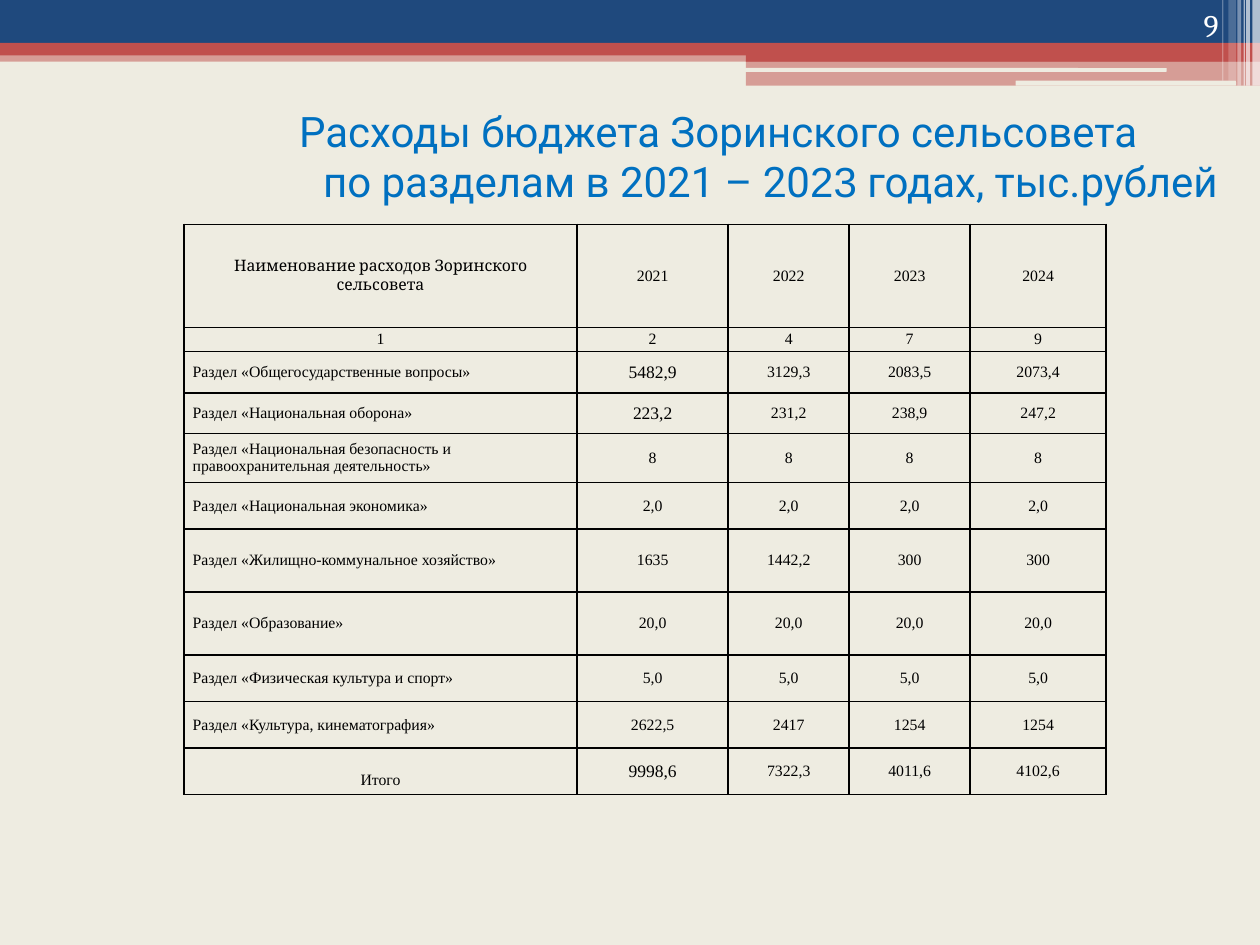
from lxml.etree import SubElement
from pptx import Presentation
from pptx.dml.color import RGBColor
from pptx.enum.shapes import MSO_SHAPE
from pptx.enum.text import MSO_ANCHOR, PP_ALIGN
from pptx.oxml.ns import qn
from pptx.util import Inches, Pt

CREAM, NAVY, RED, WHITE, BLACK = "EEECE1", "1F497D", "C0504D", "FFFFFF", "000000"
TITLE_BLUE = "0070C0"
SERIF = "Times New Roman"

# left, top, width, height, colour, opacity in percent
BANDS = [
    (0, 0.4, 10, 0.09, RED, 50),
    (0, 0, 10, 0.34, NAVY, 100),
    (0, 0.34, 10, 0.1, RED, 100),
    (5.92, 0.39, 4.08, 0.1, RED, 100),
    (5.92, 0.48, 4.08, 0.2, RED, 50),
]
SLOTS = [(5.91, 0.54, 3.35, 0.03), (8.06, 0.64, 1.75, 0.04)]
# left, width, height, opacity in percent
STRIPES = [
    (9.94, 0.06, 0.68, 65),
    (9.89, 0.03, 0.68, 65),
    (9.87, 0.01, 0.68, 60),
    (9.82, 0.03, 0.68, 40),
    (9.75, 0.06, 0.64, 20),
    (9.7, 0.01, 0.64, 30),
]

COLUMN_WIDTHS = [3.12, 1.2, 0.96, 0.96, 1.08]
ROW_HEIGHTS = [0.82, 0.19, 0.33, 0.32, 0.39, 0.37, 0.5, 0.5, 0.37, 0.37, 0.37]
EXPENSES = [
    ("Наименование расходов Зоринского сельсовета", "2021", "2022", "2023", "2024"),
    ("1", "2", "4", "7", "9"),
    ("Раздел «Общегосударственные вопросы»", "5482,9", "3129,3", "2083,5", "2073,4"),
    ("Раздел «Национальная оборона»", "223,2", "231,2", "238,9", "247,2"),
    ("Раздел «Национальная безопасность и правоохранительная деятельность»",
     "8", "8", "8", "8"),
    ("Раздел «Национальная экономика»", "2,0", "2,0", "2,0", "2,0"),
    ("Раздел «Жилищно-коммунальное хозяйство»", "1635", "1442,2", "300", "300"),
    ("Раздел «Образование»", "20,0", "20,0", "20,0", "20,0"),
    ("Раздел «Физическая культура и спорт»", "5,0", "5,0", "5,0", "5,0"),
    ("Раздел «Культура, кинематография»", "2622,5", "2417", "1254", "1254"),
    ("Итого", "9998,6", "7322,3", "4011,6", "4102,6"),
]
LARGER_VALUES = {"5482,9", "223,2", "9998,6"}


def rgb(hex_colour):
    return RGBColor.from_string(hex_colour)


def write(paragraph, text, *, size, font, colour=BLACK, align=PP_ALIGN.CENTER):
    paragraph.alignment = align
    run = paragraph.add_run()
    run.text = text
    run.font.size = Pt(size)
    run.font.name = font
    run.font.color.rgb = rgb(colour)


def add_block(slide, left, top, width, height, colour, opacity=100,
              kind=MSO_SHAPE.RECTANGLE):
    block = slide.shapes.add_shape(
        kind, Inches(left), Inches(top), Inches(width), Inches(height))
    block.shadow.inherit = False
    block.line.fill.background()
    block.fill.solid()
    block.fill.fore_color.rgb = rgb(colour)
    if opacity < 100:
        tint = block.fill._xPr.find(".//" + qn("a:srgbClr"))
        SubElement(tint, qn("a:alpha"), val=str(opacity * 1000))


def add_header(slide):
    for band in BANDS:
        add_block(slide, *band)
    for slot in SLOTS:
        add_block(slide, *slot, CREAM, kind=MSO_SHAPE.ROUNDED_RECTANGLE)
    for left, width, height, opacity in STRIPES:
        add_block(slide, left, 0, width, height, WHITE, opacity)


def fill_title(title):
    title.left, title.top = Inches(0), Inches(0.84)
    title.width, title.height = Inches(10), Inches(0.79)
    frame = title.text_frame
    frame.word_wrap = True
    frame.vertical_anchor = MSO_ANCHOR.MIDDLE
    # Each line is centred in the space right of its own indent
    lines = [
        (1.4, [("Расходы бюджета Зоринского сельсовета", "Roboto")]),
        (2.23, [("по разделам в 2021 – 20", "Roboto"), ("23", "Arial"),
                (" годах, тыс.рублей", "Roboto")]),
    ]
    for number, (indent, parts) in enumerate(lines):
        line = frame.add_paragraph() if number else frame.paragraphs[0]
        line.space_before = Pt(0)
        line._p.get_or_add_pPr().set("marL", str(Inches(indent)))
        for text, font in parts:
            write(line, text, size=24, font=font, colour=TITLE_BLUE)


def add_page_number(slide):
    page_number = slide.shapes.add_textbox(
        Inches(8.94), Inches(0), Inches(0.83), Inches(0.4))
    frame = page_number.text_frame
    frame.word_wrap = True
    frame.vertical_anchor = MSO_ANCHOR.BOTTOM
    write(frame.paragraphs[0], "9", size=18, font="Cambria", colour=WHITE,
          align=PP_ALIGN.RIGHT)


def add_borders(cell):
    properties = cell._tc.get_or_add_tcPr()
    for side in ("lnL", "lnR", "lnT", "lnB"):
        border = SubElement(properties, qn("a:" + side), w=str(Pt(1)))
        solid = SubElement(border, qn("a:solidFill"))
        SubElement(solid, qn("a:srgbClr"), val=BLACK)


def add_expense_table(slide):
    table = slide.shapes.add_table(
        len(ROW_HEIGHTS), len(COLUMN_WIDTHS), Inches(1.46), Inches(1.78),
        Inches(sum(COLUMN_WIDTHS)), Inches(sum(ROW_HEIGHTS))).table
    table.first_row = table.horz_banding = False
    for column, width in zip(table.columns, COLUMN_WIDTHS):
        column.width = Inches(width)
    for row, height in zip(table.rows, ROW_HEIGHTS):
        row.height = Inches(height)

    for r, values in enumerate(EXPENSES):
        for c, text in enumerate(values):
            cell = table.cell(r, c)
            cell.margin_left = cell.margin_right = Inches(0.07)
            cell.margin_top = cell.margin_bottom = Inches(0)
            cell.vertical_anchor = MSO_ANCHOR.MIDDLE
            add_borders(cell)
            cell.fill.background()
            write(cell.text_frame.paragraphs[0], text,
                  size=10 if text in LARGER_VALUES else 9,
                  font="Cambria" if r == c == 0 else SERIF,
                  align=PP_ALIGN.LEFT if text.startswith("Раздел")
                  else PP_ALIGN.CENTER)
    # The total's label sits a little lower than its values
    table.cell(len(EXPENSES) - 1, 0).margin_top = Inches(0.13)


def main():
    deck = Presentation()
    deck.slide_width, deck.slide_height = Inches(10), Inches(7.5)
    slide = deck.slides.add_slide(deck.slide_layouts[5])
    slide.background.fill.solid()
    slide.background.fill.fore_color.rgb = rgb(CREAM)

    add_header(slide)
    fill_title(slide.shapes.title)
    add_page_number(slide)
    add_expense_table(slide)
    deck.save("out.pptx")


if __name__ == "__main__":
    main()
